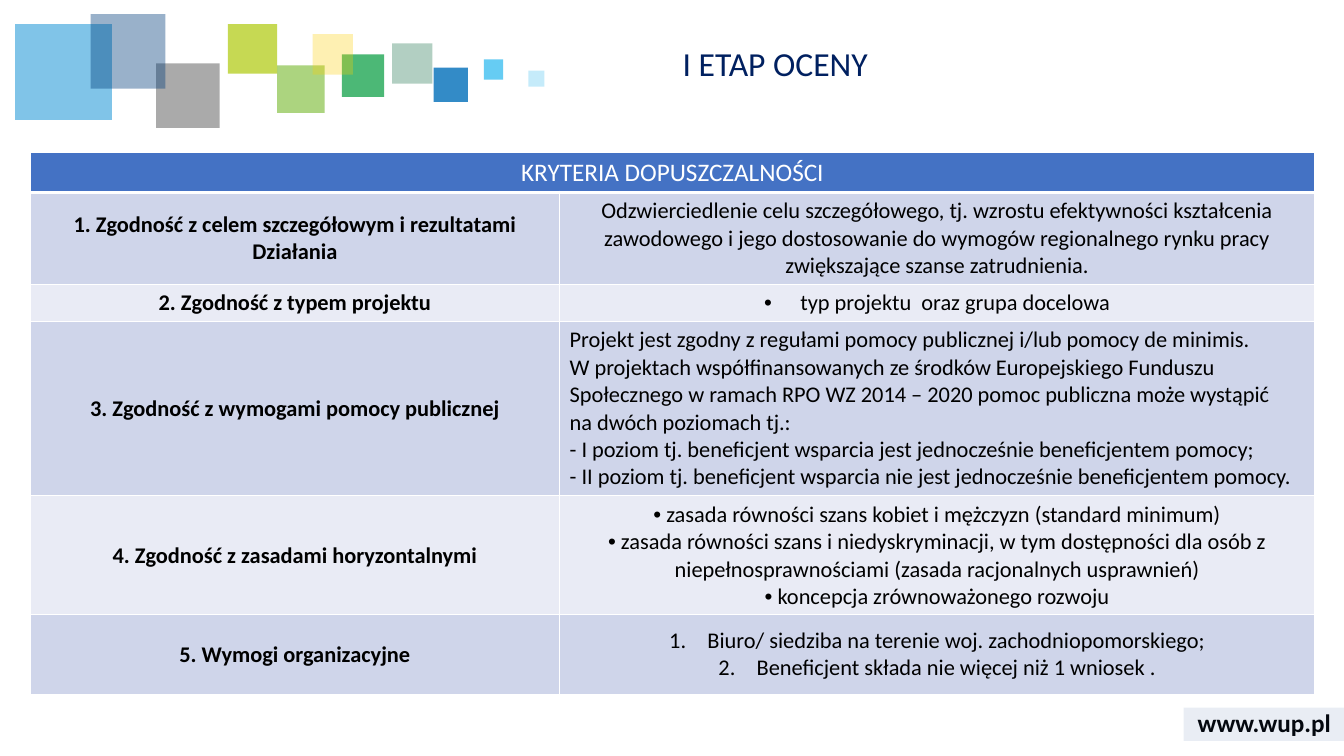
from lxml import etree
from pptx import Presentation
from pptx import util as u
from pptx.dml.color import RGBColor
from pptx.enum import shapes, text
from pptx.oxml.ns import qn

PX = 9144  # 100 px to the inch
HUE = {"navy": "002060", "black": "000000", "white": "FFFFFF", "head": "4472C4",
       "band": "CFD5EA", "pale": "E9EBF5", "foot": "2F5597", "pine": "006138",
       "blue": "006EB9", "green": "009A3C", "azure": "028BD3", "leaf": "75B82A",
       "gray": "575757", "ink": "003D7C", "sky": "40C0F1", "lime": "AFCA0B",
       "gold": "FED000"}


def block(x, y, w, h, hue, alpha):
    box = slide.shapes.add_shape(shapes.MSO_SHAPE.RECTANGLE, x * PX, y * PX, w * PX, h * PX)
    box.shadow.inherit = False
    box.line.fill.background()
    box.fill.solid()
    box.fill.fore_color.rgb = RGBColor.from_string(HUE[hue])
    tint = next(box.fill._xPr.iter(qn("a:srgbClr")))
    etree.SubElement(tint, qn("a:alpha")).set("val", str(alpha * 1000))


def style(para, size, hue, bold=False):
    font = para.font
    font.name, font.size, font.bold = "Calibri", u.Pt(size), bold
    font.color.rgb = RGBColor.from_string(HUE[hue])


deck = Presentation()
deck.slide_width, deck.slide_height = 1333 * PX, 750 * PX
slide = deck.slides.add_slide(deck.slide_layouts[5])

# Web address
site = slide.shapes.add_textbox(1174 * PX, 697 * PX, 160 * PX, 40 * PX).text_frame
site.word_wrap = True
site.vertical_anchor = text.MSO_ANCHOR.MIDDLE
site.text = "www.wup.pl"
site.paragraphs[0].alignment = text.PP_ALIGN.CENTER
style(site.paragraphs[0], 18, "black", True)

# Coloured squares and the footer tint
for tile in [(389, 43, 40, 40, "pine", 30), (430, 67, 34, 34, "blue", 80),
             (339, 54, 42, 42, "green", 70), (15, 24, 96, 95, "azure", 50),
             (275, 65, 47, 47, "leaf", 60), (155, 63, 63, 64, "gray", 50),
             (90, 14, 74, 74, "ink", 40), (480, 59, 19, 20, "sky", 80),
             (226, 24, 49, 49, "lime", 70), (310, 34, 40, 40, "gold", 30),
             (524, 70, 16, 16, "sky", 30), (1174, 702, 160, 33, "foot", 10)]:
    block(*tile)

# Criteria: left cell, right paragraphs, bullet, indent
rows = [
    ("KRYTERIA DOPUSZCZALNOŚCI", [], None, 0),
    ("1. Zgodność z celem szczegółowym i rezultatami Działania",
     ["Odzwierciedlenie celu szczegółowego, tj. wzrostu efektywności kształcenia "
      "zawodowego i jego dostosowanie do wymogów regionalnego rynku pracy "
      "zwiększające szanse zatrudnienia."], None, 0),
    ("2. Zgodność z typem projektu", [" typ projektu  oraz grupa docelowa"], "•", 31),
    ("3. Zgodność z wymogami pomocy publicznej",
     ["Projekt jest zgodny z regułami pomocy publicznej i/lub pomocy de minimis.\v"
      "W projektach współfinansowanych ze środków Europejskiego Funduszu "
      "Społecznego w ramach RPO WZ 2014 – 2020 pomoc publiczna może wystąpić\v"
      "na dwóch poziomach tj.:",
      "- I poziom tj. beneficjent wsparcia jest jednocześnie beneficjentem pomocy;",
      "- II poziom tj. beneficjent wsparcia nie jest jednocześnie beneficjentem pomocy."],
     None, 0),
    ("4. Zgodność z zasadami horyzontalnymi",
     [" zasada równości szans kobiet i mężczyzn (standard minimum)",
      " zasada równości szans i niedyskryminacji, w tym dostępności dla osób "
      "z niepełnosprawnościami (zasada racjonalnych usprawnień)",
      " koncepcja zrównoważonego rozwoju"], "•", 0),
    ("5. Wymogi organizacyjne",
     ["Biuro/ siedziba na terenie woj. zachodniopomorskiego;",
      "Beneficjent składa nie więcej niż 1 wniosek ."], "1.", 38),
]
high = [39, 91, 37, 173, 118, 79]
grid = slide.shapes.add_table(len(rows), 2, 30 * PX, 151 * PX, 1274 * PX, sum(high) * PX).table
for col, wide in zip(grid.columns, [525, 749]):
    col.width = wide * PX
grid.cell(0, 0).merge(grid.cell(0, 1))

for i, (left, right, mark, dent) in enumerate(rows):
    grid.rows[i].height = high[i] * PX
    for j, lines in enumerate([[left], right]):
        cell = grid.cell(i, j)
        cell.vertical_anchor = text.MSO_ANCHOR.MIDDLE if i else text.MSO_ANCHOR.TOP
        cell.text = "\n".join(lines)
        for para in cell.text_frame.paragraphs:
            plain = i == 3 and j == 1
            para.alignment = text.PP_ALIGN.LEFT if plain else text.PP_ALIGN.CENTER
            if j and mark:
                prop = para._p.get_or_add_pPr()
                prop.set("marL", str(dent * PX))
                prop.set("indent", str(-dent * PX))
                if mark == "•":
                    etree.SubElement(prop, qn("a:buFont")).set("typeface", "Arial")
                    etree.SubElement(prop, qn("a:buChar")).set("char", mark)
                else:
                    etree.SubElement(prop, qn("a:buAutoNum")).set("type", "arabicPeriod")
            style(para, 16 if i else 18, "black" if i else "white", bool(i) and j == 0)
        # Borders come before the fill
        edge = cell._tc.get_or_add_tcPr()
        for side in ["L", "R", "T", "B"]:
            thick = 3 if (i, side) in [(0, "B"), (1, "T")] else 1
            line = etree.SubElement(edge, qn("a:ln" + side), w=str(u.Pt(thick)))
            paint = etree.SubElement(line, qn("a:solidFill"))
            etree.SubElement(paint, qn("a:srgbClr")).set("val", HUE["white"])
        cell.fill.solid()
        tone = "head" if i == 0 else "band" if i % 2 else "pale"
        cell.fill.fore_color.rgb = RGBColor.from_string(HUE[tone])

# Title
title = slide.shapes.title
title.left, title.top, title.width, title.height = 667 * PX, 42 * PX, 636 * PX, 55 * PX
frame = title.text_frame
frame.text = "I ETAP OCENY"
frame.auto_size = text.MSO_AUTO_SIZE.NONE
frame.vertical_anchor = text.MSO_ANCHOR.TOP
head = frame.paragraphs[0]
head.alignment = text.PP_ALIGN.LEFT
head.line_spacing = 0.9
style(head, 24, "navy")

deck.save("out.pptx")
